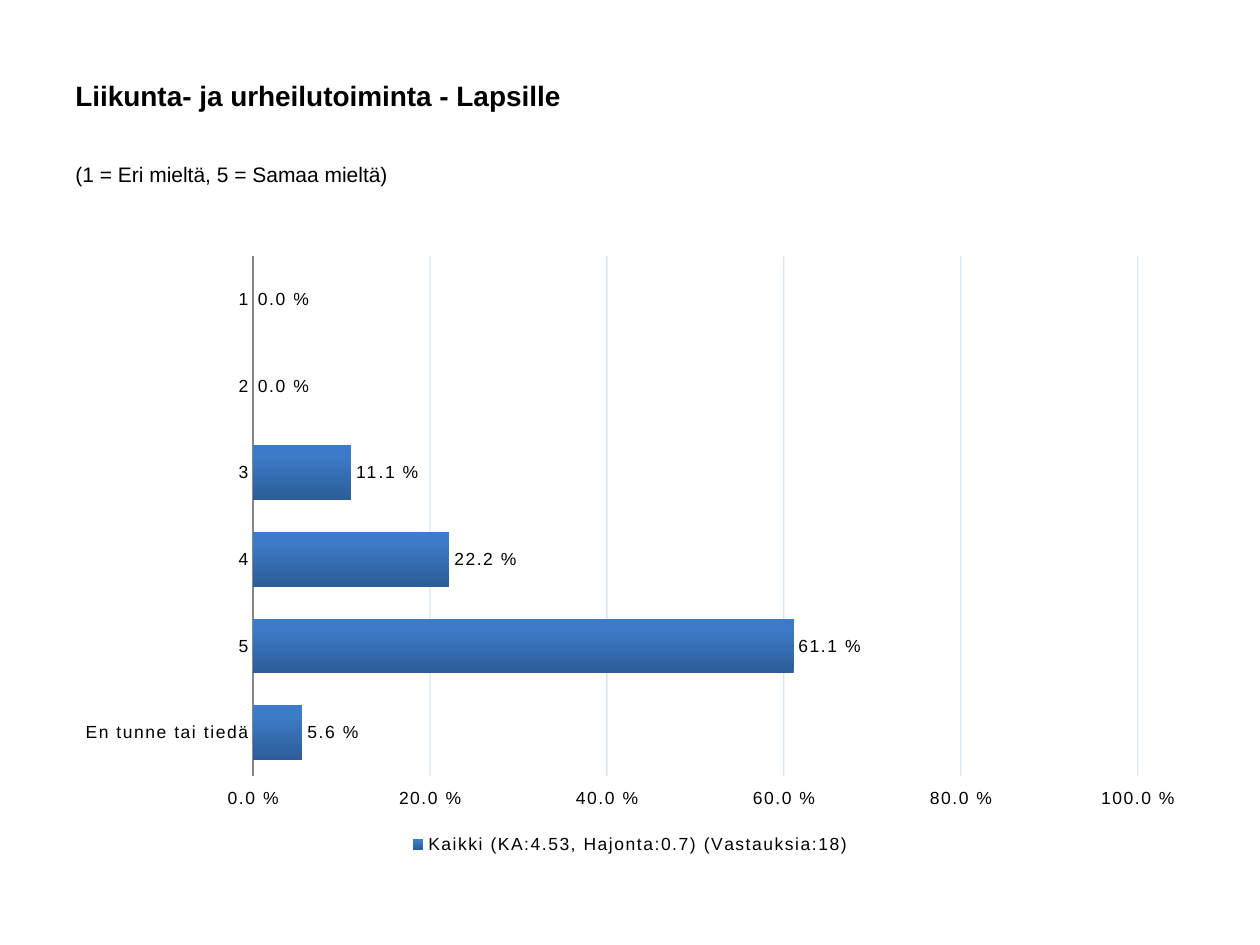
from dataclasses import dataclass

from lxml import etree
from pptx import Presentation
from pptx.chart.data import CategoryChartData
from pptx.dml.color import RGBColor
from pptx.enum.chart import (XL_AXIS_CROSSES, XL_CHART_TYPE, XL_LABEL_POSITION,
                             XL_LEGEND_POSITION, XL_TICK_LABEL_POSITION,
                             XL_TICK_MARK)
from pptx.enum.text import MSO_ANCHOR
from pptx.oxml.ns import qn
from pptx.util import Pt

BAR_CLUSTERED = XL_CHART_TYPE.BAR_CLUSTERED
CROSS_MAXIMUM = XL_AXIS_CROSSES.MAXIMUM
LABEL_OUTSIDE = XL_LABEL_POSITION.OUTSIDE_END
LEGEND_BOTTOM = XL_LEGEND_POSITION.BOTTOM
TICK_LABELS_HIGH = XL_TICK_LABEL_POSITION.HIGH
NO_TICK = XL_TICK_MARK.NONE
TOP, MIDDLE = MSO_ANCHOR.TOP, MSO_ANCHOR.MIDDLE

PERCENT = r"0.0\ %"
LEFT, WIDTH = 36, 648
ANSWERS = {"1": 0, "2": 0, "3": 0.111, "4": 0.222, "5": 0.611,
           "En tunne tai tiedä": 0.056}
SERIES_NAME = "Kaikki (KA:4.53, Hajonta:0.7) (Vastauksia:18)"


@dataclass(frozen=True)
class Theme:
    font: str = "Arial"
    title_size: int = 16
    body_size: int = 12
    chart_size: int = 10
    text: RGBColor = RGBColor(0, 0, 0)
    axis: RGBColor = RGBColor(0x86, 0x86, 0x86)
    grid: RGBColor = RGBColor(0x4F, 0x81, 0xBD)
    bar_bottom: RGBColor = RGBColor(0x2C, 0x5D, 0x98)
    bar_top: RGBColor = RGBColor(0x3C, 0x7B, 0xC7)


THEME = Theme()


def style_font(font, size, bold=False):
    font.name = THEME.font
    font.size = Pt(size)
    font.bold = bold
    font.color.rgb = THEME.text


def add_text(slide, text, top, height, size, bold=False, anchor=TOP, space_before=0):
    shape = slide.shapes.add_textbox(Pt(LEFT), Pt(top), Pt(WIDTH), Pt(height))
    frame = shape.text_frame
    frame.word_wrap = True
    frame.vertical_anchor = anchor
    paragraph = frame.paragraphs[0]
    paragraph.space_before = Pt(space_before)
    run = paragraph.add_run()
    run.text = text
    style_font(run.font, size, bold)


def style_axes(chart):
    category_axis, value_axis = chart.category_axis, chart.value_axis
    for axis in (category_axis, value_axis):
        axis.major_tick_mark = NO_TICK
        axis.minor_tick_mark = NO_TICK
        style_font(axis.tick_labels.font, THEME.chart_size)

    # First answer on top, percentages along the bottom
    category_axis.reverse_order = True
    category_axis.crosses = CROSS_MAXIMUM
    value_axis.tick_label_position = TICK_LABELS_HIGH
    category_axis.has_major_gridlines = False
    category_axis.format.line.color.rgb = THEME.axis
    category_axis.format.line.width = Pt(1)

    value_axis.minimum_scale = 0
    value_axis.maximum_scale = 1
    value_axis.major_unit = 0.2
    value_axis.tick_labels.number_format = PERCENT
    value_axis.tick_labels.number_format_is_linked = False
    value_axis.format.line.fill.background()

    # Pale gridlines
    value_axis.has_major_gridlines = True
    gridlines = value_axis.major_gridlines
    gridlines.format.line.color.rgb = THEME.grid
    gridlines.format.line.width = Pt(0.75)
    for color in value_axis._element.find(qn("c:majorGridlines")).iter(qn("a:srgbClr")):
        etree.SubElement(color, qn("a:alpha")).set("val", "20000")


def style_bars(plot):
    plot.gap_width = 58
    plot.vary_by_categories = False
    fill = plot.series[0].format.fill
    fill.gradient()
    fill.gradient_angle = 90
    stops = ((0, THEME.bar_bottom), (0.8, THEME.bar_top))
    for stop, (position, color) in zip(fill.gradient_stops, stops):
        stop.position = position
        stop.color.rgb = color

    plot.has_data_labels = True
    labels = plot.data_labels
    labels.show_value = True
    labels.position = LABEL_OUTSIDE
    labels.number_format = PERCENT
    labels.number_format_is_linked = False
    style_font(labels.font, THEME.chart_size)


def add_answer_chart(slide, top, height):
    data = CategoryChartData(number_format=PERCENT)
    data.categories = list(ANSWERS)
    data.add_series(SERIES_NAME, list(ANSWERS.values()))
    chart = slide.shapes.add_chart(BAR_CLUSTERED, Pt(LEFT), Pt(top), Pt(WIDTH),
                                   Pt(height), data).chart
    chart.has_title = False
    style_font(chart.font, THEME.chart_size)
    style_axes(chart)
    style_bars(chart.plots[0])

    chart.has_legend = True
    chart.legend.position = LEGEND_BOTTOM
    chart.legend.include_in_layout = False
    style_font(chart.legend.font, THEME.chart_size)

    # Letter spacing of one point in all chart text
    for properties in chart.element.iter(qn("a:defRPr")):
        properties.set("spc", "100")


def main():
    presentation = Presentation()
    presentation.slide_width, presentation.slide_height = Pt(720), Pt(540)
    slide = presentation.slides.add_slide(presentation.slide_layouts[6])

    # Heading and scale
    add_text(slide, "Liikunta- ja urheilutoiminta - Lapsille", 26, 57,
             THEME.title_size, bold=True, anchor=MIDDLE)
    add_text(slide, "(1 = Eri mieltä, 5 = Samaa mieltä)", 88.5, 42.5,
             THEME.body_size, space_before=2)

    # Share of each answer
    add_answer_chart(slide, 139.5, 351.5)
    presentation.save("out.pptx")


if __name__ == "__main__":
    main()
